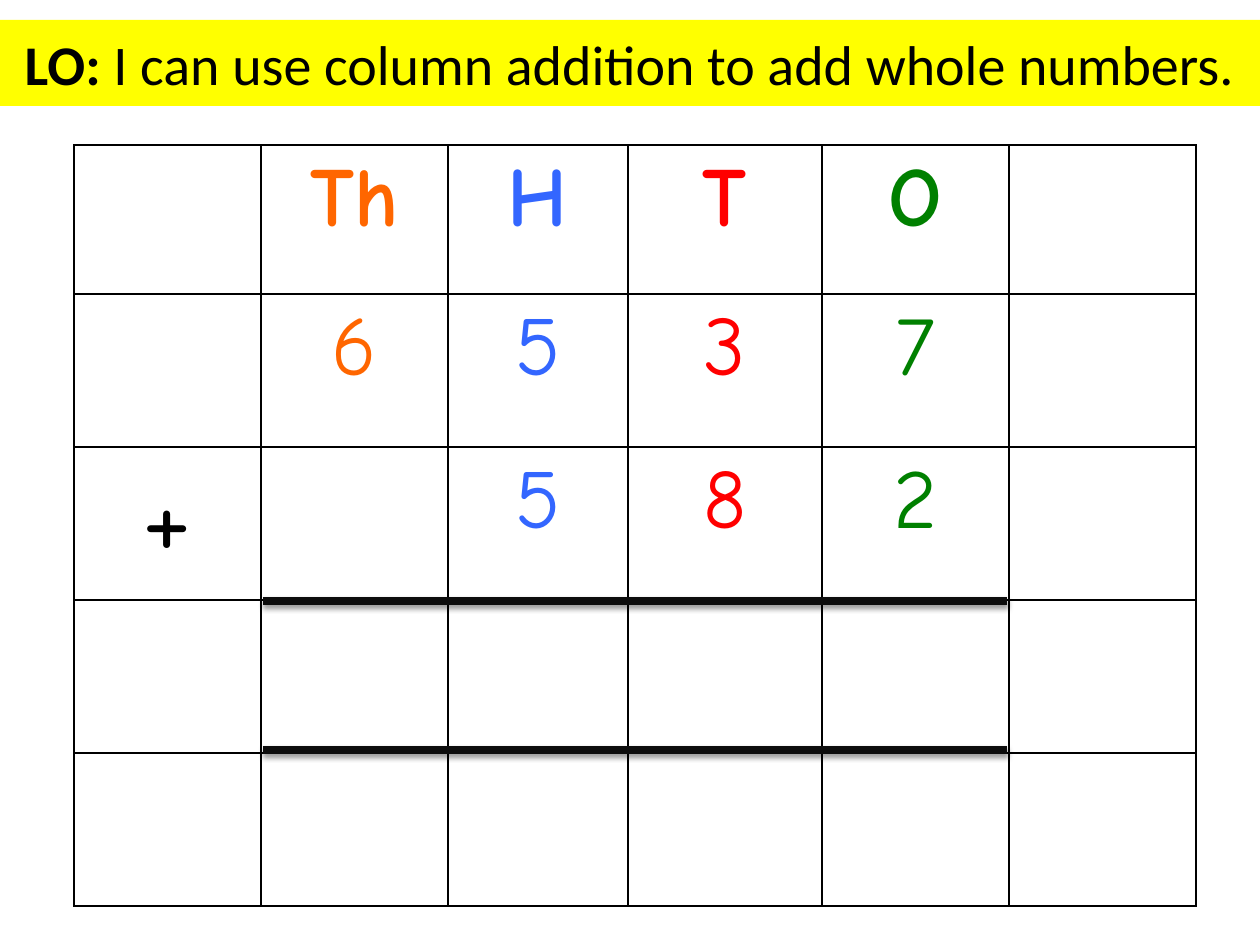
from lxml import etree
from pptx import Presentation
from pptx.dml.color import RGBColor
from pptx.enum import shapes, text
from pptx.oxml import parse_xml
from pptx.oxml.ns import nsdecls
from pptx.util import Pt

PX = 914400 / 126  # EMU in one px
THEME = {
    "band": "FFFF00", "paper": "FFFFFF", "ink": "000000", "rule": "0D0D0D",
    "places": ["000000", "FF6600", "3366FF", "FF0000", "008000", "000000"],
    "title": 32, "digit": 48, "plus": 66,
    "head": "Calibri", "body": "Comic Neue",
}


def px(*vals):
    return [round(v * PX) for v in vals]


def write(para, words, name, size, bold, color):
    para.alignment = text.PP_ALIGN.CENTER
    run = para.add_run()
    run.text = words
    for key, val in {"name": name, "size": Pt(size), "bold": bold}.items():
        setattr(run.font, key, val)
    run.font.color.rgb = RGBColor.from_string(color)


deck = Presentation()
deck.slide_width, deck.slide_height = px(1260, 945)
slide = deck.slides.add_slide(deck.slide_layouts[6])

# Title band
band = slide.shapes.add_shape(shapes.MSO_SHAPE.RECTANGLE, *px(0, 20, 1260, 86))
band.shadow.inherit = False
band.fill.solid()
band.fill.fore_color.rgb = RGBColor.from_string(THEME["band"])
band.line.fill.background()
frame = band.text_frame
form = {"word_wrap": True, "vertical_anchor": text.MSO_ANCHOR.MIDDLE,
        "margin_top": 0, "margin_bottom": 0}
for key, val in form.items():
    setattr(frame, key, val)
for words, bold in [("LO: ", True),
                    ("I can use column addition to add whole numbers.", False)]:
    write(frame.paragraphs[0], words, THEME["head"], THEME["title"], bold, THEME["ink"])

# Place value grid
rows = [
    ["", "Th", "H", "T", "O", ""],
    ["", "6", "5", "3", "7", ""],
    ["+", "", "5", "8", "2", ""],
    [""] * 6,
    [""] * 6,
]
wide = [187, 187, 180, 194, 187, 187]
tall = [149] + [153] * 4
grid = slide.shapes.add_table(
    len(rows), len(wide), *px(74, 145, sum(wide), sum(tall))).table
grid.first_row = grid.horz_banding = False
for col, size in zip(grid.columns, px(*wide)):
    col.width = size
for row, size in zip(grid.rows, px(*tall)):
    row.height = size

for r, row in enumerate(rows):
    for c, mark in enumerate(row):
        cell = grid.cell(r, c)
        if mark:
            size = THEME["plus" if mark == "+" else "digit"]
            write(cell.text_frame.paragraphs[0], mark, THEME["body"], size,
                  r == 0, THEME["places"][c])
        cell.fill.solid()
        cell.fill.fore_color.rgb = RGBColor.from_string(THEME["paper"])
        # Borders go before the fill in the cell properties
        props = cell._tc.get_or_add_tcPr()
        for i, side in enumerate(["lnL", "lnR", "lnT", "lnB"]):
            props.insert(i, parse_xml(
                f'<a:{side} {nsdecls("a")} w="{Pt(1)}"><a:solidFill>'
                f'<a:srgbClr val="{THEME["ink"]}"/></a:solidFill></a:{side}>'))

# Answer rules, with a soft shadow below
for y in [601, 750]:
    rule = slide.shapes.add_connector(
        shapes.MSO_CONNECTOR.STRAIGHT, *px(263, y, 1007, y))
    rule.line.width = Pt(4.5)
    rule.line.color.rgb = RGBColor.from_string(THEME["rule"])
    glow = parse_xml(
        f'<a:effectLst {nsdecls("a")}><a:outerShdw blurRad="{Pt(3.1)}" '
        f'dist="{Pt(1.6)}" dir="5400000" rotWithShape="0">'
        f'<a:srgbClr val="{THEME["ink"]}"><a:alpha val="38000"/></a:srgbClr>'
        '</a:outerShdw></a:effectLst>')
    rule._element.spPr.append(glow)

deck.save("out.pptx")
